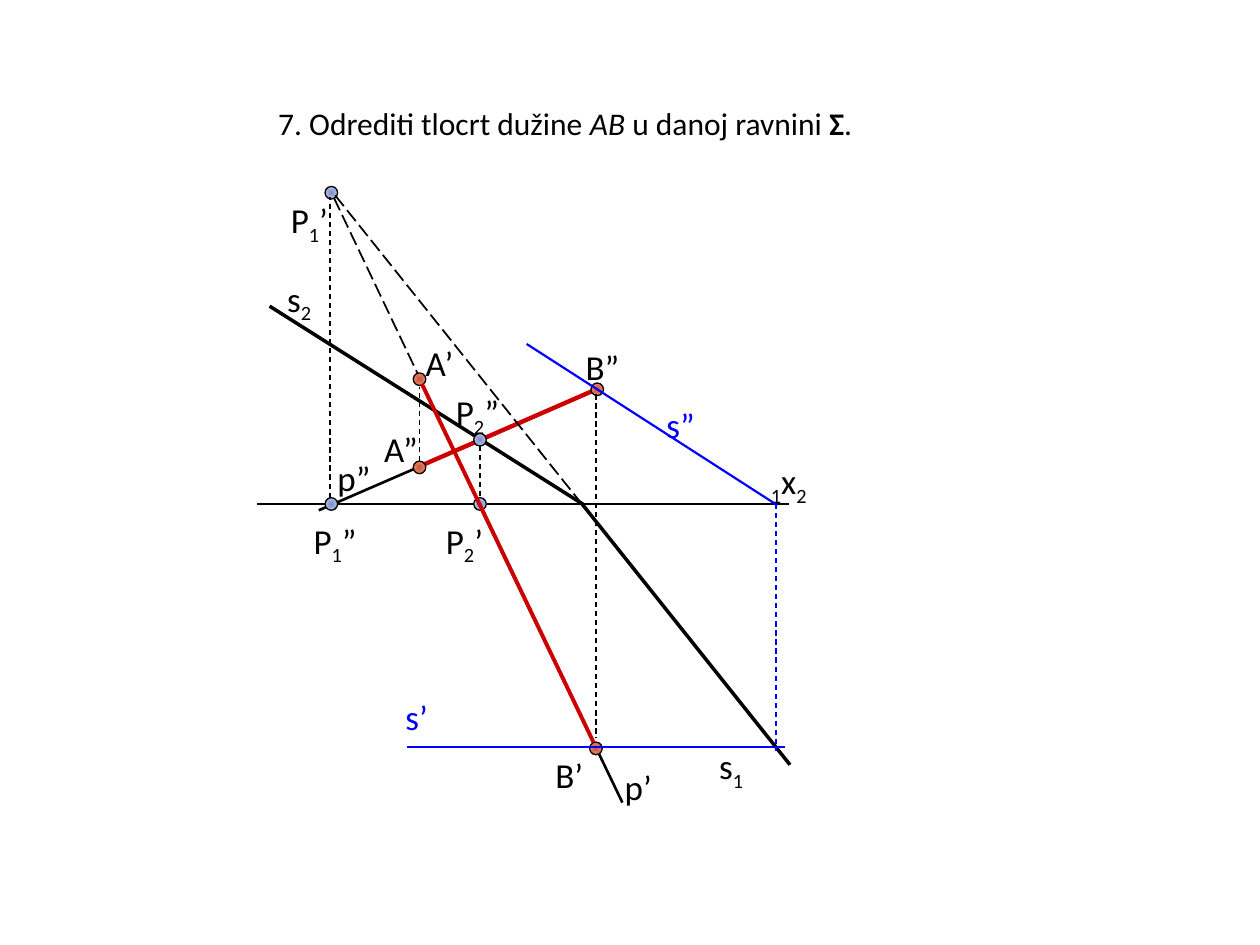
from lxml import etree
from pptx import Presentation
from pptx.dml.color import RGBColor
from pptx.enum.dml import MSO_LINE
from pptx.enum.shapes import MSO_CONNECTOR, MSO_SHAPE
from pptx.enum.text import MSO_AUTO_SIZE
from pptx.oxml.ns import qn
from pptx.util import Inches, Pt

STRAIGHT = MSO_CONNECTOR.STRAIGHT
OVAL = MSO_SHAPE.OVAL
DASH = MSO_LINE.DASH
LONG_DASH = MSO_LINE.LONG_DASH
FIT = MSO_AUTO_SIZE.SHAPE_TO_FIT_TEXT

BLACK, RED, BLUE = "000000", "CC0000", "0000FF"
TRACE_POINT = ("808DB6", "B3C5FF")
SEGMENT_POINT = ("B65C47", "FF8163")
DOT = 0.1


def rgb(value):
    return RGBColor.from_string(value)


def add_text(shapes, runs, x, y, w, h=0.44, size=20, color=BLACK):
    s = shapes.add_textbox(Inches(x), Inches(y), Inches(w), Inches(h))
    tf = s.text_frame
    tf.word_wrap = True
    tf.auto_size = FIT
    p = tf.paragraphs[0]
    for text, extra in runs:
        r = p.add_run()
        r.text = text
        font_format = {"name": "Calibri", "size": Pt(size), **extra}
        baseline = font_format.pop("baseline", None)
        for key, value in font_format.items():
            setattr(r.font, key, value)
        r.font.color.rgb = rgb(color)
        if baseline:
            r._r.get_or_add_rPr().set("baseline", baseline)


def add_label(shapes, text, x, y, w, h=0.44, color=BLACK):
    head, *tails = text.split("_")
    runs = [(head, {})]
    for tail in tails:
        runs += [(tail[0], {"baseline": "-25000"}), (tail[1:], {})]
    add_text(shapes, [run for run in runs if run[0]], x, y, w, h, color=color)


def add_line(shapes, start, end, width=0.75, color=BLACK, dash=None):
    s = shapes.add_connector(STRAIGHT, *map(Inches, (*start, *end)))
    s.line.color.rgb = rgb(color)
    s.line.width = Pt(width)
    if dash:
        s.line.dash_style = dash
    etree.SubElement(s._element.spPr, qn("a:effectLst"))


def add_point(shapes, x, y, colors):
    s = shapes.add_shape(OVAL, Inches(x), Inches(y), Inches(DOT), Inches(DOT))
    s.shadow.inherit = False
    s.fill.gradient()
    for stop, color in zip(s.fill.gradient_stops, colors):
        stop.color.rgb = rgb(color)
    grad = s._element.spPr.find(qn("a:gradFill"))
    grad.remove(grad.find(qn("a:lin")))
    path = etree.SubElement(grad, qn("a:path"), path="shape")
    sides = dict.fromkeys("ltrb", "50000")
    etree.SubElement(path, qn("a:fillToRect"), **sides)
    s.line.color.rgb = rgb(BLACK)
    s.line.width = Pt(0.75)


def add_projection(shapes, point, colors, start, end, label=None):
    group = shapes.add_group_shape().shapes
    add_point(group, *point, colors)
    add_line(group, start, end, dash=DASH)
    if label:
        add_label(group, *label)
    return group


def add_plane(shapes):
    add_line(shapes, (2.04, 4), (6.26, 4))
    add_label(shapes, "_1x_2", 6.02, 3.6, 0.7)
    add_line(shapes, (2.14, 2.43), (4.64, 4.01), 2)
    add_line(shapes, (4.62, 4), (6.27, 6.07), 2)
    add_label(shapes, "s_2", 2.18, 2.15, 0.53)
    add_label(shapes, "s_1", 5.61, 5.86, 0.56)


def add_elevation(shapes):
    add_label(shapes, "A”", 2.95, 3.34, 0.49)
    add_label(shapes, "B”", 4.55, 2.69, 0.64)
    group = shapes.add_group_shape().shapes
    add_line(group, (2.53, 4.05), (4.26, 3.3), 1.5)
    add_label(group, "p”", 2.58, 3.57, 0.56)
    add_line(shapes, (3.31, 3.71), (4.71, 3.1), 2.5, RED)


def add_trace_points(shapes):
    add_point(shapes, 3.76, 3.44, TRACE_POINT)
    add_point(shapes, 2.58, 3.95, TRACE_POINT)
    add_label(shapes, "P_2”", 3.52, 3.05, 0.63)
    add_projection(shapes, (3.76, 3.95), TRACE_POINT, (3.81, 3.54),
                   (3.81, 3.96), ("P_2’", 3.44, 4.07, 0.51))
    add_label(shapes, "P_1”", 2.39, 4.07, 1.02)
    group = add_projection(shapes, (2.58, 1.48), TRACE_POINT,
                           (2.62, 3.95), (2.62, 1.56))
    add_line(group, (2.66, 1.55), (4.61, 3.99), 1, dash=LONG_DASH)
    add_label(shapes, "P_1’", 2.21, 1.53, 0.73)


def add_plan(shapes):
    group = shapes.add_group_shape().shapes
    add_line(group, (2.65, 1.57), (4.16, 4.74), 1, dash=LONG_DASH)
    add_line(group, (3.82, 4.04), (4.94, 6.37), 1.5)
    add_label(group, "p’", 4.86, 6.03, 0.66)
    add_point(shapes, 3.28, 3.66, SEGMENT_POINT)
    add_point(shapes, 4.69, 3.04, SEGMENT_POINT)
    add_projection(shapes, (4.68, 5.89), SEGMENT_POINT, (4.73, 3.13),
                   (4.73, 5.86), ("B’", 4.31, 5.93, 0.59))
    add_projection(shapes, (3.28, 2.96), SEGMENT_POINT, (3.33, 3.66),
                   (3.33, 3.07), ("A’", 3.28, 2.66, 0.46))
    add_line(shapes, (3.35, 3.05), (4.71, 5.89), 2.25, RED)


def add_horizontal_trace(shapes):
    group = shapes.add_group_shape().shapes
    add_line(group, (4.18, 2.73), (6.17, 4.01), 1.25, BLUE)
    add_label(group, "s”", 5.19, 3.15, 0.96, color=BLUE)
    add_line(shapes, (6.16, 4), (6.16, 5.96), color=BLUE, dash=DASH)
    add_line(shapes, (3.23, 5.93), (6.23, 5.93), 1.25, BLUE)
    add_label(shapes, "s’", 3.12, 5.47, 0.44, 0.77, BLUE)


def main():
    prs = Presentation()
    prs.slide_width, prs.slide_height = Inches(10), Inches(7.5)
    shapes = prs.slides.add_slide(prs.slide_layouts[6]).shapes
    task = [("7. Odrediti tlocrt dužine ", {}), ("AB", {"italic": True}),
            (" u danoj ravnini ", {}), ("Σ", {"bold": True}), (".", {})]
    add_text(shapes, task, 2.11, 0.78, 5.29, 0.4, 18)
    add_plane(shapes)
    add_elevation(shapes)
    add_trace_points(shapes)
    add_plan(shapes)
    add_horizontal_trace(shapes)
    prs.save("out.pptx")


if __name__ == "__main__":
    main()
